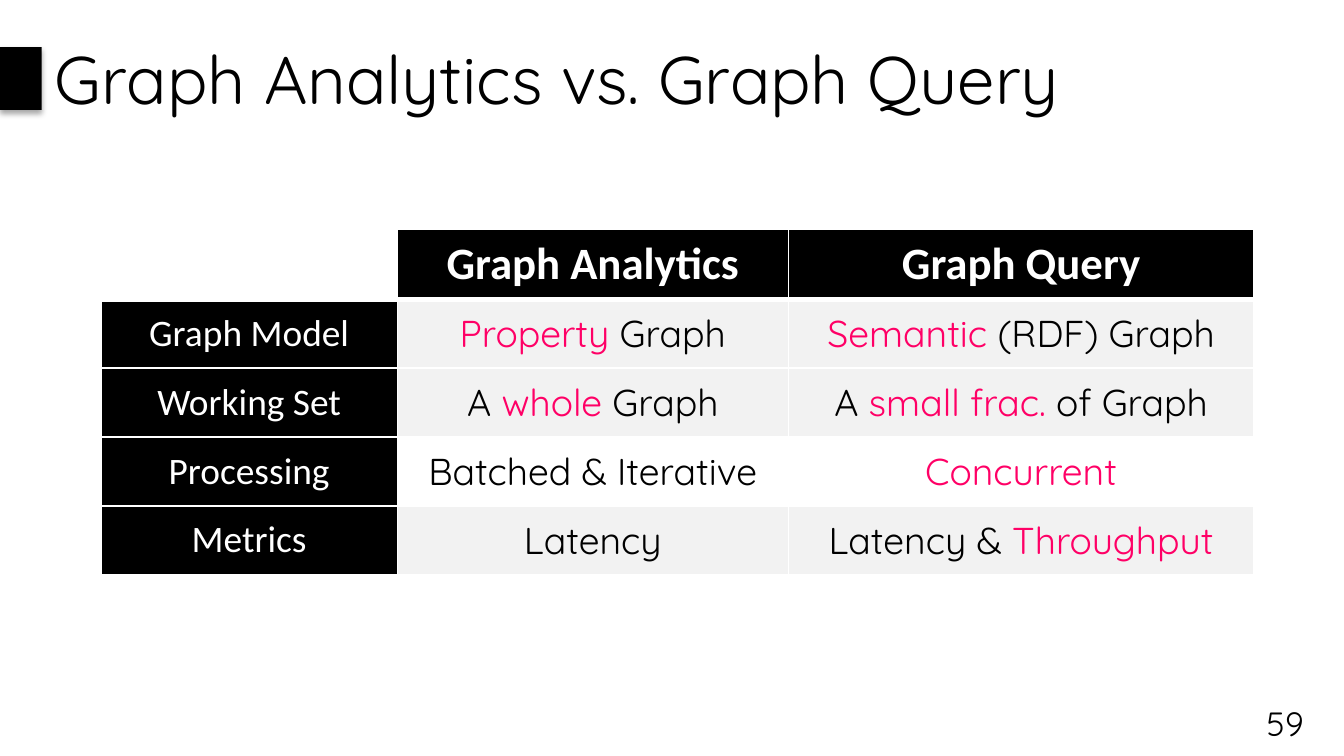
from lxml import etree
from pptx import Presentation
from pptx.dml.color import RGBColor
from pptx.enum.shapes import MSO_SHAPE
from pptx.enum.text import MSO_ANCHOR, PP_ALIGN
from pptx.oxml.ns import qn
from pptx.util import Cm, Pt

RECTANGLE = MSO_SHAPE.RECTANGLE
MIDDLE = MSO_ANCHOR.MIDDLE
LEFT, CENTER, RIGHT = PP_ALIGN.LEFT, PP_ALIGN.CENTER, PP_ALIGN.RIGHT

COLORS = {"ink": "000000", "paper": "FFFFFF", "band": "F2F2F2", "accent": "FF0066"}
BODY_FONT, HEAD_FONT = "Quicksand", "Calibri"

TITLE = "Graph Analytics vs. Graph Query"
PAGE_NUMBER = "59"
HEADERS = ["", "Graph Analytics", "Graph Query"]
ROWS = [
    ("Graph Model", "band",
     [("Property", "accent"), (" Graph", "ink")],
     [("Semantic", "accent"), (" (RDF) Graph", "ink")]),
    ("Working Set", "band",
     [("A ", "ink"), ("whole ", "accent"), ("Graph", "ink")],
     [("A ", "ink"), ("small frac. ", "accent"), ("of Graph", "ink")]),
    ("Processing", "paper",
     [("Batched & Iterative", "ink")],
     [("Concurrent", "accent")]),
    ("Metrics", "band",
     [("Latency", "ink")],
     [("Latency & ", "ink"), ("Throughput", "accent")]),
]
COLUMN_WIDTHS = [5.6, 7.39, 8.8]
HEADER_HEIGHT, ROW_HEIGHT = 1.32, 1.3


def rgb(name):
    return RGBColor.from_string(COLORS[name])


def write(frame, spans, size, font, align, bold=False):
    frame.word_wrap = True
    para = frame.paragraphs[0]
    para.alignment = align
    para.font.size, para.font.name, para.font.bold = Pt(size), font, bold
    for text, color in spans:
        span = para.add_run()
        span.text = text
        span.font.color.rgb = rgb(color)


def add_text(page, box_cm, text, size, align):
    box = page.shapes.add_textbox(*map(Cm, box_cm))
    box.text_frame.vertical_anchor = MIDDLE
    write(box.text_frame, [(text, "ink")], size, BODY_FONT, align)


def add_color(parent, name):
    return etree.SubElement(parent, qn("a:srgbClr"), val=COLORS[name])


def add_marker(page):
    marker = page.shapes.add_shape(RECTANGLE, 0, Cm(0.89), Cm(0.79), Cm(1.19))
    marker.fill.solid()
    marker.fill.fore_color.rgb = rgb("ink")
    marker.line.fill.background()
    marker.shadow.inherit = False
    effects = marker.element.spPr.find(qn("a:effectLst"))
    shadow = etree.SubElement(effects, qn("a:outerShdw"), blurRad=str(Pt(3.1)),
                              dist=str(Pt(1.8)), dir="5400000", rotWithShape="0")
    etree.SubElement(add_color(shadow, "ink"), qn("a:alpha"), val="35000")


def set_borders(cell, widths):
    props = cell._tc.get_or_add_tcPr()
    for index, (side, width) in enumerate(widths.items()):
        line = etree.Element(qn(f"a:ln{side}"), w=str(Pt(width)))
        add_color(etree.SubElement(line, qn("a:solidFill")), "paper")
        props.insert(index, line)


def fill_cell(cell, spans, fill, size, font, bold, widths):
    cell.vertical_anchor = MIDDLE
    cell.fill.solid()
    cell.fill.fore_color.rgb = rgb(fill)
    write(cell.text_frame, spans, size, font, CENTER, bold)
    set_borders(cell, widths)


def add_comparison(page):
    height = HEADER_HEIGHT + ROW_HEIGHT * len(ROWS)
    frame = page.shapes.add_table(len(ROWS) + 1, len(HEADERS), Cm(1.91), Cm(4.34),
                                  Cm(sum(COLUMN_WIDTHS)), Cm(height))
    table = frame.table
    for column, width in zip(table.columns, COLUMN_WIDTHS):
        column.width = Cm(width)
    for index, row in enumerate(table.rows):
        row.height = Cm(ROW_HEIGHT if index else HEADER_HEIGHT)

    for c, header in enumerate(HEADERS):
        spans = [(header, "paper")] if header else []
        fill_cell(table.cell(0, c), spans, "ink" if header else "paper", 24,
                  HEAD_FONT, True, {"L": 1, "R": 1, "T": 1, "B": 3})
    for r, (label, band, *entries) in enumerate(ROWS, 1):
        widths = {"L": 1, "R": 1, "T": 3 if r == 1 else 1, "B": 1}
        fill_cell(table.cell(r, 0), [(label, "paper")], "ink", 20, HEAD_FONT, False, widths)
        for c, spans in enumerate(entries, 1):
            fill_cell(table.cell(r, c), spans, band, 20, BODY_FONT, False, widths)


def main():
    deck = Presentation()
    deck.slide_width, deck.slide_height = Cm(25.4), Cm(14.29)
    page = deck.slides.add_slide(deck.slide_layouts[6])
    add_text(page, (23.09, 13.28, 1.8, 0.76), PAGE_NUMBER, 18, RIGHT)
    add_text(page, (0.79, 0, 24.61, 2.95), TITLE, 36, LEFT)
    add_marker(page)
    add_comparison(page)
    deck.save("out.pptx")


if __name__ == "__main__":
    main()
